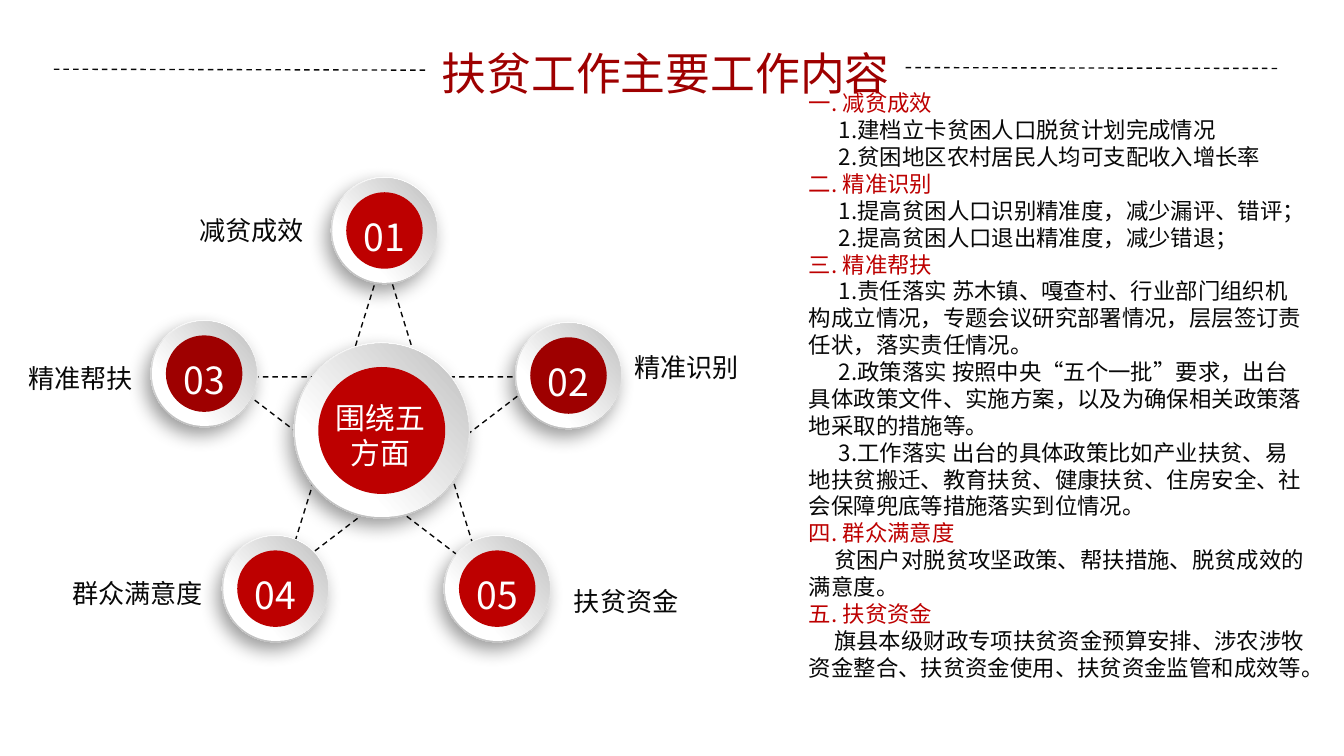
from dataclasses import dataclass

import pptx
import pptx.dml.color
import pptx.enum.dml
import pptx.enum.shapes
import pptx.enum.text
import pptx.oxml
import pptx.oxml.ns
import pptx.util

Pt = pptx.util.Pt
SHAPES = pptx.enum.shapes.MSO_SHAPE
ALIGN = pptx.enum.text.PP_ALIGN


@dataclass(frozen=True)
class Theme:
    """Colours, type sizes and the font of the deck."""
    font: str = "Noto Sans CJK SC"
    red: str = "BD0000"
    dark_red: str = "9E0000"
    ink: str = "080808"
    white: str = "FFFFFF"
    title: int = 24
    number: int = 20
    hub: int = 16
    label: int = 14
    body: int = 12
    leading: float = 1.2


@dataclass(frozen=True)
class Box:
    """A rectangle in points."""
    left: float
    top: float
    width: float
    height: float

    def inner(self, left, top, width, height):
        """Return a box placed relative to this one."""
        return Box(self.left + left, self.top + top, width, height)

    def centred(self, x, y, size):
        """Return a square centred on a point of this box."""
        return self.inner(x - size / 2, y - size / 2, size, size)

    def lengths(self):
        """Return left, top, width and height as lengths."""
        return [Pt(value) for value in (self.left, self.top, self.width, self.height)]


THEME = Theme()
EFFECTS = '<a:effectLst xmlns:a="http://schemas.openxmlformats.org/drawingml/2006/main">%s</a:effectLst>'
SOFT_SHADOW = (
    f'<a:outerShdw blurRad="{Pt(10)}" dist="{Pt(5)}" dir="7380000" algn="ctr" rotWithShape="0">'
    '<a:srgbClr val="000000"><a:alpha val="39000"/></a:srgbClr></a:outerShdw>'
)
SECTIONS = [
    ("一. 减贫成效", 16, ["1.建档立卡贫困人口脱贫计划完成情况",
                     "2.贫困地区农村居民人均可支配收入增长率"]),
    ("二. 精准识别", 16, ["1.提高贫困人口识别精准度，减少漏评、错评；",
                     "2.提高贫困人口退出精准度，减少错退；"]),
    ("三. 精准帮扶", 16, [
        "1.责任落实 苏木镇、嘎查村、行业部门组织机构成立情况，专题会议研究部署情况，层层签订责任状，落实责任情况。",
        "2.政策落实 按照中央“五个一批”要求，出台具体政策文件、实施方案，以及为确保相关政策落地采取的措施等。",
        "3.工作落实 出台的具体政策比如产业扶贫、易地扶贫搬迁、教育扶贫、健康扶贫、住房安全、社会保障兜底等措施落实到位情况。"]),
    ("四. 群众满意度", 13.5, ["贫困户对脱贫攻坚政策、帮扶措施、脱贫成效的满意度。"]),
    ("五. 扶贫资金", 13.5, ["旗县本级财政专项扶贫资金预算安排、涉农涉牧资金整合、扶贫资金使用、扶贫资金监管和成效等。"]),
]
NODES = [
    ("01", 206, 123.5, THEME.red, "减贫成效", 99.4, 110.2, 70.6),
    ("02", 304.6, 201.2, THEME.dark_red, "精准识别", 332.6, 183.6, 70.6),
    ("03", 109.4, 200.2, THEME.dark_red, "精准帮扶", 7.9, 189.4, 70.6),
    ("04", 147.6, 315.4, THEME.red, "群众满意度", 31.7, 304.6, 84.2),
    ("05", 266.4, 315.4, THEME.red, "扶贫资金", 300.2, 308.9, 70.6),
]


def rgb(value):
    """Turn a hex string into a colour."""
    return pptx.dml.color.RGBColor.from_string(value)


def place(shape, box):
    """Move and size a shape to a box."""
    shape.left, shape.top, shape.width, shape.height = box.lengths()


def prepare_frame(frame, size, wrap=True):
    """Set insets, wrapping and anchor of a text frame."""
    frame.auto_size = pptx.enum.text.MSO_AUTO_SIZE.NONE
    frame.word_wrap = wrap
    frame.vertical_anchor = pptx.enum.text.MSO_ANCHOR.TOP
    frame.margin_left = frame.margin_right = Pt(7.2)
    frame.margin_top = Pt(3.6 + 0.09 * size)
    frame.margin_bottom = Pt(0)


def format_para(para, size, colour, align=ALIGN.LEFT):
    """Format a paragraph and its runs."""
    para.alignment = align
    para.line_spacing = Pt(size * THEME.leading)
    para.space_before = para.space_after = Pt(0)
    for span in para.runs:
        span.font.size = Pt(size)
        span.font.name = THEME.font
        span.font.color.rgb = rgb(colour)
        east = span.font._element.makeelement(pptx.oxml.ns.qn("a:ea"), {"typeface": THEME.font})
        span.font._element.find(pptx.oxml.ns.qn("a:latin")).addnext(east)


def add_text(page, box, text, size, colour, align=ALIGN.CENTER, wrap=True):
    """Add a one-paragraph text box."""
    shape = page.shapes.add_textbox(*box.lengths())
    prepare_frame(shape.text_frame, size, wrap)
    shape.text_frame.text = text
    format_para(shape.text_frame.paragraphs[0], size, colour, align)


def dash(line):
    """Give a line the thin dashed style."""
    line.color.rgb = rgb(THEME.ink)
    line.width = Pt(0.75)
    line.dash_style = pptx.enum.dml.MSO_LINE.DASH


def add_rule(page, x1, y1, x2, y2):
    """Add a dashed straight line."""
    rule = page.shapes.add_connector(
        pptx.enum.shapes.MSO_CONNECTOR.STRAIGHT, Pt(x1), Pt(y1), Pt(x2), Pt(y2))
    dash(rule.line)
    rule._element.spPr.append(pptx.oxml.parse_xml(EFFECTS % ""))


def add_disc(page, box, colour=None, stops=(), rotation=0, shaded=False):
    """Add a circle with a plain or gradient fill."""
    disc = page.shapes.add_shape(SHAPES.OVAL, *box.lengths())
    disc.rotation = rotation
    disc.line.fill.background()
    if colour:
        disc.fill.solid()
        disc.fill.fore_color.rgb = rgb(colour)
    else:
        disc.fill.gradient()
        disc.fill.gradient_angle = 315
        for stop, (position, tint) in zip(disc.fill.gradient_stops, stops):
            stop.position = position
            stop.color.rgb = rgb(tint)
    if shaded:
        disc._element.spPr.append(pptx.oxml.parse_xml(EFFECTS % SOFT_SHADOW))
    else:
        disc.shadow.inherit = False


def add_badge(page, box, core, colour):
    """Add a raised ring around a coloured core."""
    middle, size = box.width / 2, box.width
    add_disc(page, box, stops=[(0.17, "FFFFFF"), (0.88, "B8B8B8")], rotation=62.3, shaded=True)
    add_disc(page, box.centred(middle, middle, size - 1.4),
             stops=[(0.29, "FFFFFF"), (0.98, "BFBFBF")], rotation=273)
    add_disc(page, box.centred(middle, middle, core), colour)


def add_heading(page, box):
    """Place the title between two dashed rules."""
    title = page.shapes.title
    place(title, box.inner(199.4, 0, 257, 36))
    prepare_frame(title.text_frame, THEME.title)
    title.text_frame.text = "扶贫工作主要工作内容"
    format_para(title.text_frame.paragraphs[0], THEME.title, THEME.dark_red, ALIGN.CENTER)
    for start, end, rise in ((0, 199.4, 18.4), (456.4, box.width, 17.5)):
        add_rule(page, box.left + start, box.top + rise, box.left + end, box.top + rise + 0.5)


def add_wheel(page, box):
    """Draw the star, the hub and the five numbered badges."""
    star = page.shapes.add_shape(SHAPES.STAR_5_POINT, *box.inner(120.2, 136.8, 170.6, 170.6).lengths())
    star.fill.background()
    star.shadow.inherit = False
    dash(star.line)
    add_badge(page, box.centred(204.5, 230.6, 94.3), 68, THEME.red)
    add_text(page, box.inner(171.4, 208.8, 64.8, 46), "围绕五方面", THEME.hub, THEME.white)
    for number, x, y, colour, label, left, top, width in NODES:
        add_badge(page, box.centred(x, y, 57.4), 41, colour)
        add_text(page, box.inner(x - 19.8, y - 14.4, 39.6, 31.7), number, THEME.number, THEME.white)
        add_text(page, box.inner(left, top, width, 24.5), label, THEME.label, THEME.ink, wrap=False)


def add_details(page, box):
    """Fill the body with the five sections."""
    body = page.placeholders[1]
    place(body, box)
    frame = body.text_frame
    prepare_frame(frame, THEME.body)
    rows = []
    for heading, indent, items in SECTIONS:
        rows.append((heading, 0, THEME.red))
        rows.extend((item, indent, THEME.ink) for item in items)
    for index, (text, indent, colour) in enumerate(rows):
        para = frame.add_paragraph() if index else frame.paragraphs[0]
        para.text = text
        properties = para._p.get_or_add_pPr()
        properties.set("marL", "0")
        properties.set("indent", str(int(Pt(indent))))
        properties.append(properties.makeelement(pptx.oxml.ns.qn("a:buNone"), {}))
        format_para(para, THEME.body, colour)


def main():
    """Build and save the deck."""
    deck = pptx.Presentation()
    deck.slide_width, deck.slide_height = Pt(720), Pt(405)
    page = deck.slides.add_slide(deck.slide_layouts[1])
    add_heading(page, Box(28.8, 18.7, 656.6, 36))
    add_wheel(page, Box(0, 0, 410, 405))
    add_details(page, Box(426.2, 43.2, 282.2, 341.3))
    deck.save("out.pptx")


if __name__ == "__main__":
    main()
